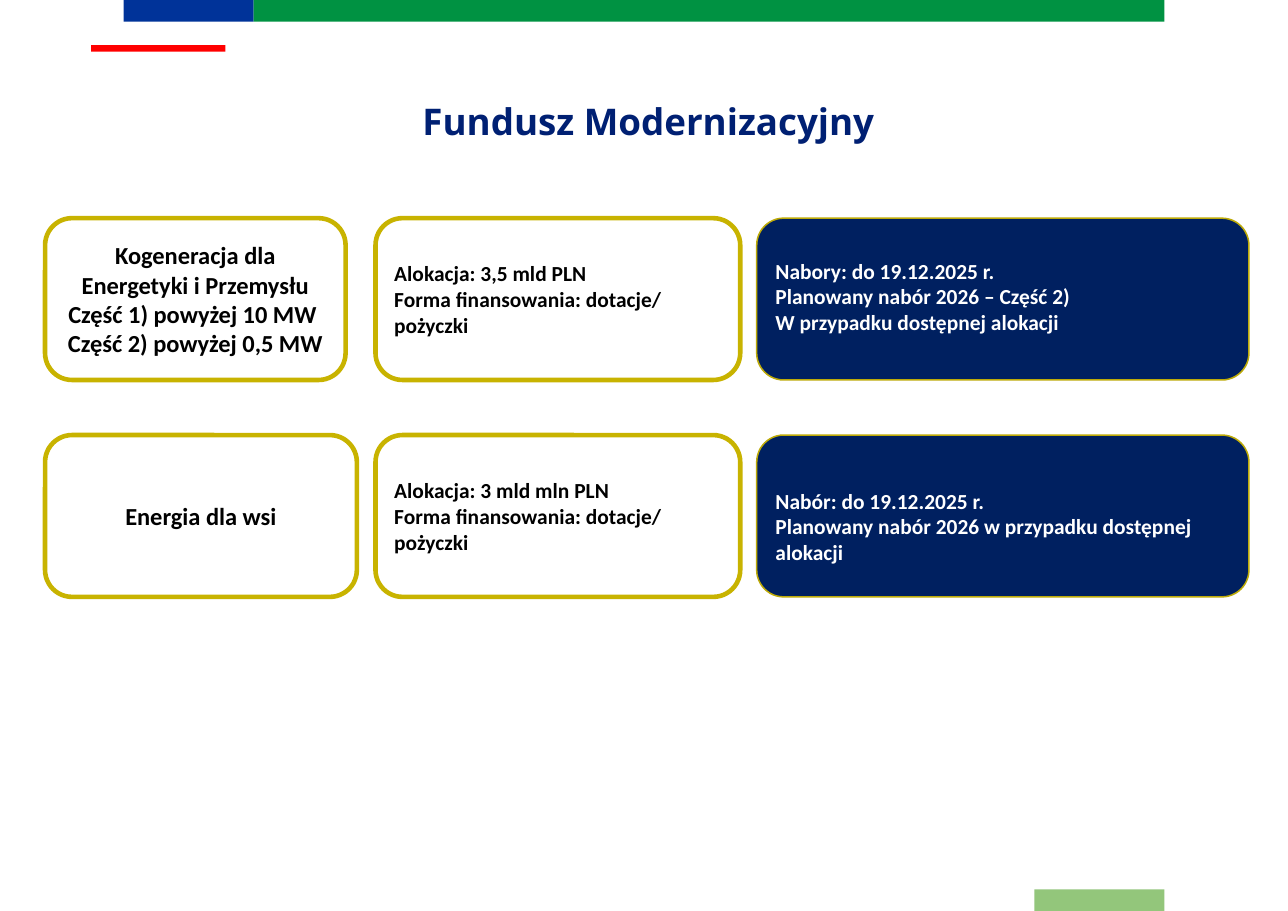
from pptx import Presentation
from pptx.dml.color import RGBColor
from pptx.enum.shapes import MSO_SHAPE
from pptx.enum.text import MSO_ANCHOR, MSO_AUTO_SIZE, PP_ALIGN
from pptx.util import Cm, Pt

COLORS = {
    "blue": "003399", "green": "009242", "pale": "93C67B", "red": "FF0000",
    "title": "002073", "navy": "002060", "gold": "C8B300", "rim": "BDAA08",
    "white": "FFFFFF", "black": "000000",
}
ROW_TOPS = (5.03, 10.03)
ROW_HEIGHT = 3.73
COLUMN_LEFTS = (1.04, 8.66, 17.45)


def color(name):
    return RGBColor.from_string(COLORS[name])


def style(para, font, size, ink, align):
    para.alignment = align
    para.font.name = font
    para.font.size = Pt(size)
    para.font.bold = True
    para.font.color.rgb = color(ink)


def add_block(slide, kind, box, fill):
    block = slide.shapes.add_shape(kind, *map(Cm, box))
    block.shadow.inherit = False
    block.fill.solid()
    block.fill.fore_color.rgb = color(fill)
    block.line.fill.background()
    return block


def add_card(slide, box, lines, size=14, align=PP_ALIGN.LEFT, dark=False):
    card = add_block(slide, MSO_SHAPE.ROUNDED_RECTANGLE, box,
                     "navy" if dark else "white")
    card.line.color.rgb = color("rim" if dark else "gold")
    card.line.width = Pt(1 if dark else 3)
    frame = card.text_frame
    frame.word_wrap = True
    frame.vertical_anchor = MSO_ANCHOR.MIDDLE
    frame.text = "\n".join(lines)
    for para in frame.paragraphs:
        style(para, "Calibri", size, "white" if dark else "black", align)
    return frame


def add_row(slide, top, width, name, funds, calls):
    """Add one programme: its name, its funding and its calls."""
    first, second, third = COLUMN_LEFTS
    add_card(slide, (first, top, width, ROW_HEIGHT), name, 16, PP_ALIGN.CENTER)
    add_card(slide, (second, top, 8.41, ROW_HEIGHT), funds)
    return add_card(slide, (third, top, 11.35, ROW_HEIGHT), calls, dark=True)


def set_title(slide, text):
    title = slide.shapes.title
    title.left, title.top = Cm(0.66), Cm(1.9)
    title.width, title.height = Cm(28.58), Cm(1.5)
    frame = title.text_frame
    frame.text = text
    frame.auto_size = MSO_AUTO_SIZE.NONE
    frame.vertical_anchor = MSO_ANCHOR.MIDDLE
    frame.margin_left = frame.margin_right = 0
    frame.margin_top = frame.margin_bottom = 0
    para = frame.paragraphs[0]
    para.line_spacing = Pt(36)
    style(para, "Open Sans", 24, "title", PP_ALIGN.CENTER)


def main():
    deck = Presentation()
    deck.slide_width, deck.slide_height = Cm(29.7), Cm(21)
    slide = deck.slides.add_slide(deck.slide_layouts[5])

    bars = (
        ((2.85, 0, 3, 0.5), "blue"),
        ((5.85, 0, 21, 0.5), "green"),
        ((23.85, 20.5, 3, 0.5), "pale"),
        ((2.1, 1.04, 3.1, 0.15), "red"),
    )
    for box, fill in bars:
        add_block(slide, MSO_SHAPE.RECTANGLE, box, fill)

    set_title(slide, "Fundusz Modernizacyjny")

    form = "Forma finansowania: dotacje/ pożyczki"
    calls = add_row(
        slide, ROW_TOPS[0], 6.93,
        ["Kogeneracja dla Energetyki i Przemysłu Część 1) powyżej 10 MW ",
         "Część 2) powyżej 0,5 MW"],
        ["Alokacja: 3,5 mld PLN", form],
        ["Nabory: do 19.12.2025 r.", "Planowany nabór 2026 – Część 2)",
         "W przypadku dostępnej alokacji"])
    calls.margin_bottom = Cm(0.25)

    calls = add_row(
        slide, ROW_TOPS[1], 7.19,
        ["Energia dla wsi"],
        ["Alokacja: 3 mld mln PLN", form],
        ["Nabór: do 19.12.2025 r.",
         "Planowany nabór 2026 w przypadku dostępnej alokacji"])
    calls.margin_top = Cm(0.6)

    deck.save("out.pptx")


if __name__ == "__main__":
    main()
